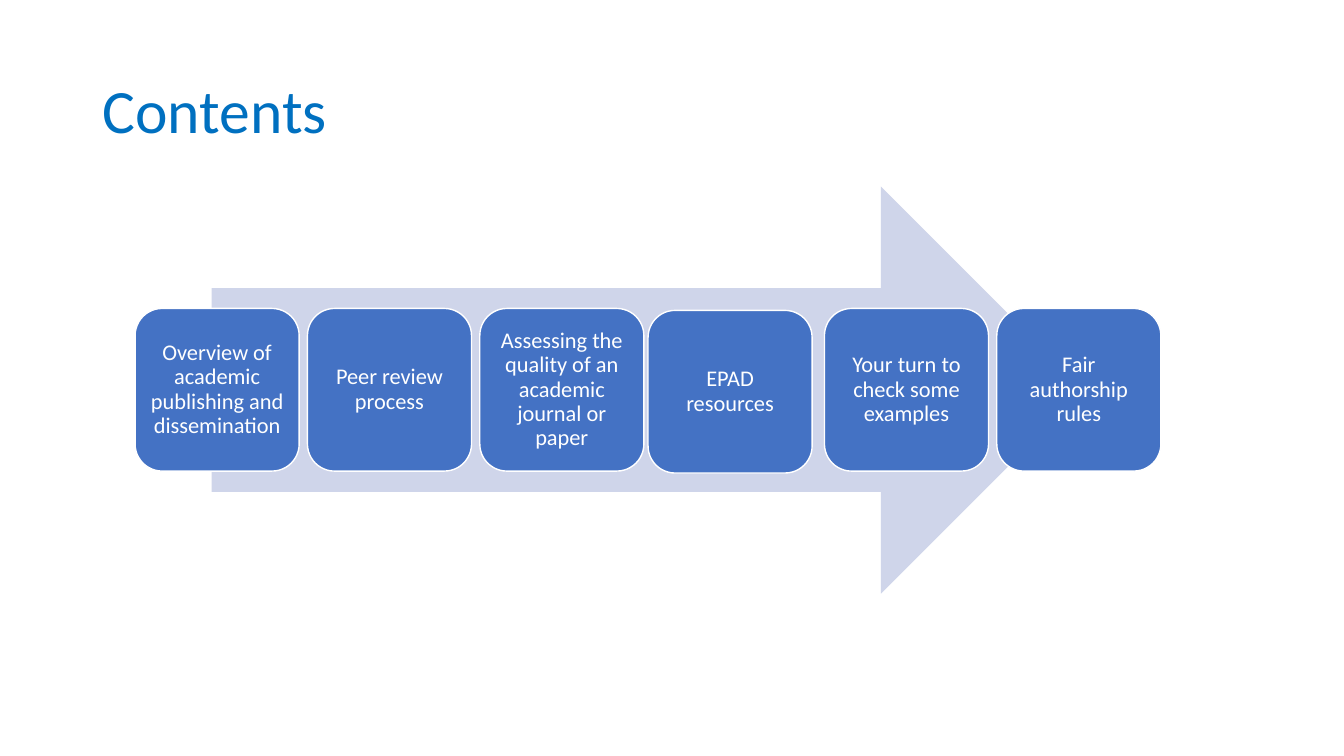
import pptx
import pptx.util
import pptx.dml.color
import pptx.enum.shapes
import pptx.enum.text

Pt = pptx.util.Pt
Shape = pptx.enum.shapes.MSO_SHAPE
Align = pptx.enum.text.PP_ALIGN

# Content: each step with its shift (right, down) from the regular row
TITLE = "Contents"
STEPS = [
    ("Overview of academic publishing and dissemination", (0, 0)),
    ("Peer review process", (0, 0)),
    ("Assessing the quality of an academic journal or paper", (0, 0)),
    ("EPAD resources", (-2.9, 1.4)),
    ("Your turn to check some examples", (0, 0)),
    ("Fair authorship rules", (0, 0)),
]

# Layout in points
TITLE_BOX = (66, 28.75, 828, 104.4)
ARROW_BOX = (151.2, 133.2, 623.5, 290.9)
ROW_LEFT, ROW_TOP = 96.5, 220.3
STEP_WIDTH, STEP_HEIGHT = 117.2, 116.2
STEP_PITCH = 123.1


def color(value):
    return pptx.dml.color.RGBColor.from_string(value)


def write(frame, text, *, size, ink, align, inset):
    frame.word_wrap = True
    frame.auto_size = pptx.enum.text.MSO_AUTO_SIZE.NONE
    frame.vertical_anchor = pptx.enum.text.MSO_ANCHOR.MIDDLE
    frame.margin_left = frame.margin_right = Pt(inset[0])
    frame.margin_top = frame.margin_bottom = Pt(inset[1])
    para = frame.paragraphs[0]
    para.alignment = align
    para.line_spacing = 0.9
    span = para.add_run()
    span.text = text
    span.font.name = "Calibri"
    span.font.size = Pt(size)
    span.font.color.rgb = color(ink)


def add_block(page, kind, box, fill, line=None):
    block = page.shapes.add_shape(kind, *map(Pt, box))
    block.shadow.inherit = False
    block.fill.solid()
    block.fill.fore_color.rgb = color(fill)
    if line:
        block.line.color.rgb = color(line)
        block.line.width = Pt(1)
    else:
        block.line.fill.background()
    return block


deck = pptx.Presentation()
deck.slide_width, deck.slide_height = Pt(960), Pt(540)
page = deck.slides.add_slide(deck.slide_layouts[5])

# Title
title = page.shapes.title
title.left, title.top, title.width, title.height = map(Pt, TITLE_BOX)
write(title.text_frame, TITLE, size=44, ink="0070C0",
      align=Align.LEFT, inset=(7.2, 3.6))

# Arrow behind the steps
add_block(page, Shape.RIGHT_ARROW, ARROW_BOX, "CFD5EA")

# Row of steps
for index, (label, (right, down)) in enumerate(STEPS):
    box = (ROW_LEFT + index * STEP_PITCH + right, ROW_TOP + down,
           STEP_WIDTH, STEP_HEIGHT)
    step = add_block(page, Shape.ROUNDED_RECTANGLE, box, "4472C4", "FFFFFF")
    write(step.text_frame, label, size=16, ink="FFFFFF",
          align=Align.CENTER, inset=(4.8, 4.8))

deck.save("out.pptx")
